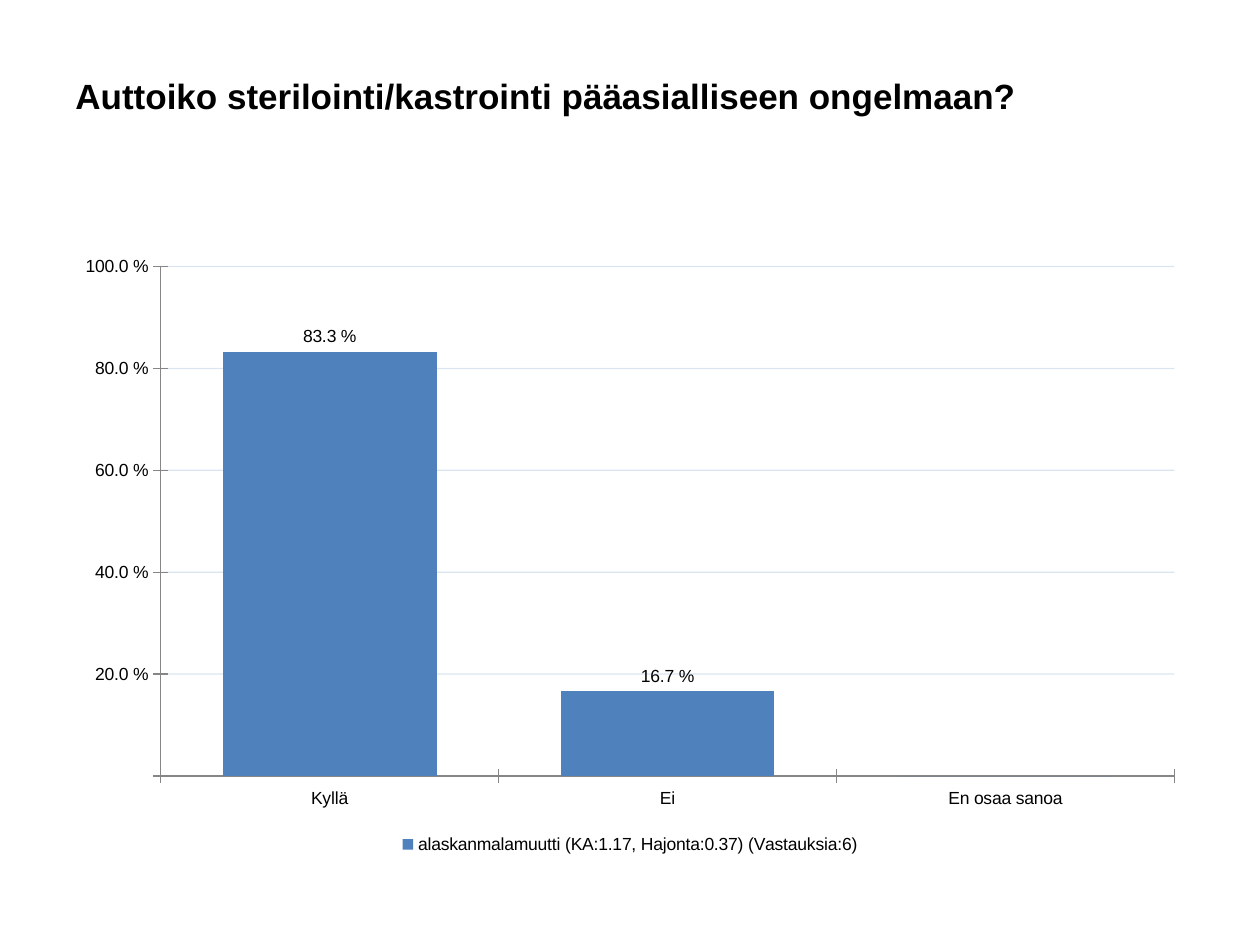
from lxml.etree import SubElement
from pptx import Presentation
from pptx.chart.data import CategoryChartData
from pptx.dml.color import RGBColor
from pptx.enum.chart import (XL_CHART_TYPE, XL_LABEL_POSITION,
                             XL_LEGEND_POSITION, XL_TICK_MARK)
from pptx.enum.text import MSO_ANCHOR
from pptx.oxml.ns import qn
from pptx.util import Inches, Pt

BLACK = RGBColor(0x00, 0x00, 0x00)
BLUE = RGBColor(0x4F, 0x81, 0xBD)
GREY = RGBColor(0x86, 0x86, 0x86)
FORM = r"0.0\ %;;;"


def style(font, size=10, bold=False, color=BLACK, name="Arial"):
    font.name = name
    font.size = Pt(size)
    font.bold = bold
    font.color.rgb = color


def add_text(slide, text, left, top, width, height, **form):
    box = slide.shapes.add_textbox(
        Inches(left), Inches(top), Inches(width), Inches(height))
    frame = box.text_frame
    frame.word_wrap = True
    frame.vertical_anchor = MSO_ANCHOR.MIDDLE
    run = frame.paragraphs[0].add_run()
    run.text = text
    style(run.font, **form)


deck = Presentation()
deck.slide_width = Inches(10)
deck.slide_height = Inches(7.5)
slide = deck.slides.add_slide(deck.slide_layouts[6])

add_text(slide, "Auttoiko sterilointi/kastrointi pääasialliseen ongelmaan?",
         0.5, 0.36, 9, 0.79, size=20, bold=True)

data = CategoryChartData(number_format=FORM)
data.categories = ["Kyllä", "Ei", "En osaa sanoa"]
data.add_series("alaskanmalamuutti (KA:1.17, Hajonta:0.37) (Vastauksia:6)",
                [0.833, 0.167, 0])
chart = slide.shapes.add_chart(
    XL_CHART_TYPE.COLUMN_CLUSTERED,
    Inches(0.5), Inches(1.94), Inches(9), Inches(4.88), data).chart
style(chart.font, name="Calibri")
chart.has_title = False
chart.has_legend = True
chart.legend.position = XL_LEGEND_POSITION.BOTTOM
chart.legend.include_in_layout = False
style(chart.legend.font)

for axis in (chart.category_axis, chart.value_axis):
    axis.major_tick_mark = XL_TICK_MARK.CROSS
    axis.minor_tick_mark = XL_TICK_MARK.NONE
    axis.tick_labels.number_format = FORM
    axis.tick_labels.number_format_is_linked = False
    style(axis.tick_labels.font)
    axis.format.line.color.rgb = GREY
    axis.format.line.width = Pt(0.75)

scale = chart.value_axis
scale.minimum_scale = 0
scale.maximum_scale = 1
scale.major_unit = 0.2
grid = scale.major_gridlines.format.line
grid.color.rgb = BLUE
grid.width = Pt(0.75)
tint = scale.major_gridlines._xAx.find(
    qn("c:majorGridlines")).find(".//" + qn("a:srgbClr"))
SubElement(tint, qn("a:alpha")).set("val", "20000")

plot = chart.plots[0]
plot.gap_width = 58
plot.vary_by_categories = False
bars = plot.series[0]
bars.format.fill.solid()
bars.format.fill.fore_color.rgb = BLUE
labels = bars.data_labels
labels.show_value = True
labels.number_format = FORM
labels.number_format_is_linked = False
labels.position = XL_LABEL_POSITION.OUTSIDE_END
style(labels.font)

deck.save("out.pptx")
